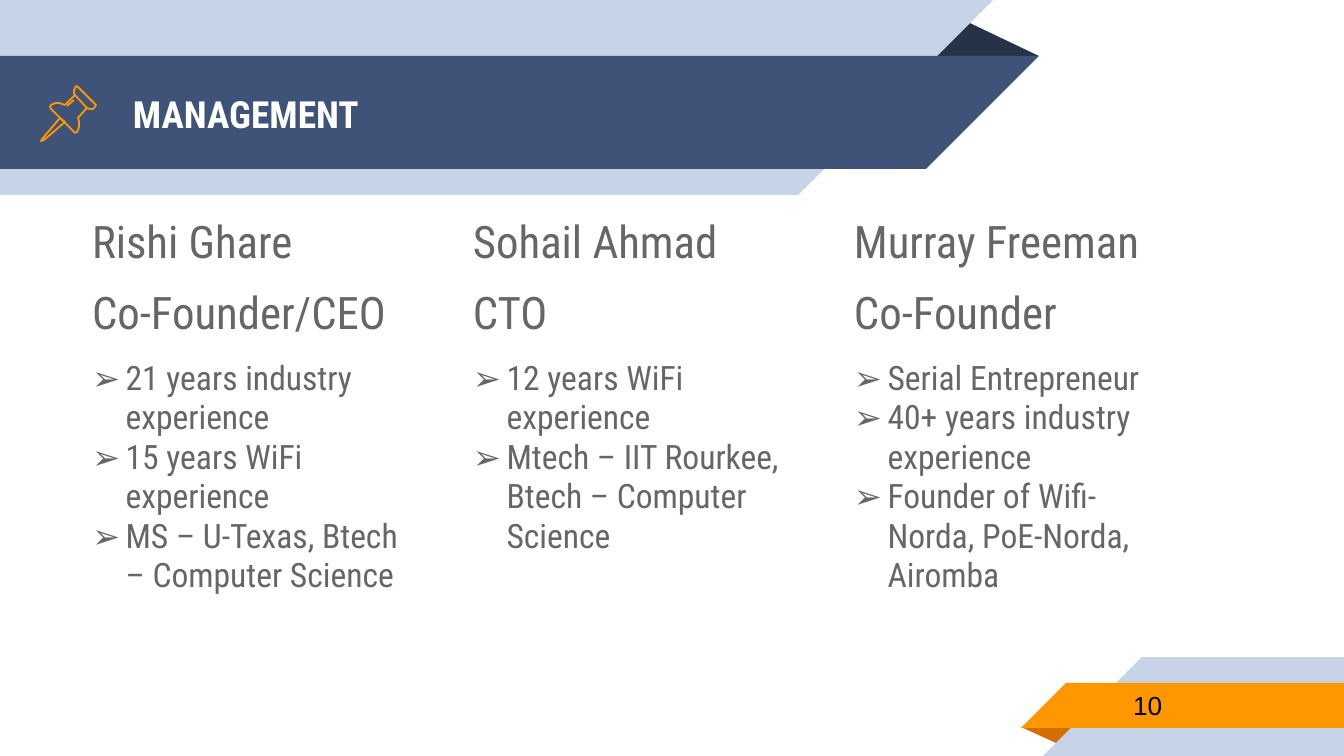
from lxml import etree
from pptx import Presentation
from pptx.dml.color import RGBColor
from pptx.enum.shapes import MSO_SHAPE
from pptx.enum.text import MSO_ANCHOR
from pptx.oxml.ns import qn
from pptx.util import Pt

RECT = MSO_SHAPE.RECTANGLE
CORNER = MSO_SHAPE.RIGHT_TRIANGLE
FOLD = MSO_SHAPE.ISOSCELES_TRIANGLE
MIDDLE = MSO_ANCHOR.MIDDLE
PX = 914400 / 134.4
NAVY, DARK, PALE = "3F5378", "263248", "C7D3E6"
ORANGE, RUST, GREY = "FF9800", "D26F00", "666666"
CONDENSED = "Roboto Condensed"


def px(*values):
    return [round(value * PX) for value in values]


def write(paragraph, text, size, color, font=CONDENSED, bold=False,
          hanging=False, bullet=None, after=None):
    run = paragraph.add_run()
    run.text = text
    run.font.size = Pt(size)
    run.font.name = font
    run.font.bold = bold
    run.font.color.rgb = RGBColor.from_string(color)
    if after:
        paragraph.space_after = Pt(after)
    if hanging:
        properties = paragraph._p.get_or_add_pPr()
        properties.set("marL", "457200")
        properties.set("indent", "-228600")
    if bullet:
        paragraph.level = 1
        etree.SubElement(properties, qn("a:buFont")).set("typeface", font)
        etree.SubElement(properties, qn("a:buChar")).set("char", bullet)


deck = Presentation()
deck.slide_width, deck.slide_height = px(1344, 756)
slide = deck.slides.add_slide(deck.slide_layouts[6])
shapes = slide.shapes

ribbons = [
    (FOLD, 925, 19, 114, 37, 0, DARK),
    (RECT, 0, 0, 798, 195, 0, PALE),
    (CORNER, 798, 0, 195, 195, 90, PALE),
    (RECT, 0, 56, 926, 113, 0, NAVY),
    (CORNER, 926, 56, 113, 113, 90, NAVY),
    (FOLD, 1021, 727, 58, 18, 180, RUST),
    (RECT, 1142, 657, 202, 99, 0, PALE),
    (CORNER, 1043, 657, 99, 99, 270, PALE),
    (RECT, 1066, 683, 278, 45, 0, ORANGE),
    (CORNER, 1021, 683, 45, 45, 270, ORANGE),
]
for kind, left, top, width, height, turn, color in ribbons:
    ribbon = shapes.add_shape(kind, *px(left, top, width, height))
    ribbon.rotation = turn
    ribbon.shadow.inherit = False
    ribbon.fill.solid()
    ribbon.fill.fore_color.rgb = RGBColor.from_string(color)
    ribbon.line.fill.background()
    if kind == FOLD:
        ribbon.adjustments[0] = 0.32

labels = [
    ((120, 57, 808, 113), "MANAGEMENT",
     dict(size=20, color="FFFFFF", bold=True)),
    ((1120, 682, 219, 47), "10",
     dict(size=14, color="000000", font="Arial")),
]
for box, text, style in labels:
    frame = shapes.add_textbox(*px(*box)).text_frame
    frame.word_wrap = True
    frame.vertical_anchor = MIDDLE
    frame.margin_left, frame.margin_right = px(13, 13)
    frame.margin_top, frame.margin_bottom = px(13, 13)
    write(frame.paragraphs[0], text, **style)

needle = [(60, 118), (43, 138), (41, 141), (44, 140), (65, 122)]
cap = [(75, 95), (87, 108), (90, 109), (93, 109), (95, 107), (96, 105),
       (78, 87), (76, 86), (75, 88), (74, 91), (74, 93)]
body = [(75, 95), (65, 105), (62, 104), (59, 103), (56, 103), (53, 104),
        (51, 105), (50, 107), (51, 109), (74, 132), (75, 133), (77, 132),
        (78, 130), (79, 127), (79, 121), (78, 118), (87, 108)]
crease = [(67, 106), (74, 100)]
for points, closed in [(needle, True), (cap, True), (body, False), (crease, False)]:
    builder = shapes.build_freeform(*points[0], scale=PX)
    builder.add_line_segments(points[1:], close=closed)
    pin_part = builder.convert_to_shape()
    pin_part.shadow.inherit = False
    pin_part.fill.background()
    pin_part.line.color.rgb = RGBColor.from_string(ORANGE)
    pin_part.line.width = Pt(0.96)

managers = [
    ("Rishi Ghare", "Co-Founder/CEO",
     ["21 years industry experience", "15 years WiFi experience",
      "MS – U-Texas, Btech – Computer Science"]),
    ("Sohail Ahmad", "CTO",
     ["12 years WiFi experience",
      "Mtech – IIT Rourkee, Btech – Computer Science"]),
    ("Murray Freeman", "Co-Founder",
     ["Serial Entrepreneur", "40+ years industry experience",
      "Founder of Wifi-Norda, PoE-Norda, Airomba"]),
]
team = shapes.add_table(1, len(managers), *px(45, 210, 1143, 493)).table
team.first_row = False
team.horz_banding = False
for column, (name, role, facts) in enumerate(managers):
    cell = team.cell(0, column)
    cell.fill.background()
    cell_properties = cell._tc.get_or_add_tcPr()
    for position, side in enumerate(("a:lnL", "a:lnR", "a:lnT", "a:lnB")):
        border = etree.Element(qn(side), w="0")
        etree.SubElement(border, qn("a:noFill"))
        cell_properties.insert(position, border)
    frame = cell.text_frame
    write(frame.paragraphs[0], name, 24, GREY, hanging=True, after=10)
    write(frame.add_paragraph(), role, 24, GREY, hanging=True, after=10)
    for fact in facts:
        write(frame.add_paragraph(), fact, 18, GREY, hanging=True, bullet="➢")

deck.save("out.pptx")
